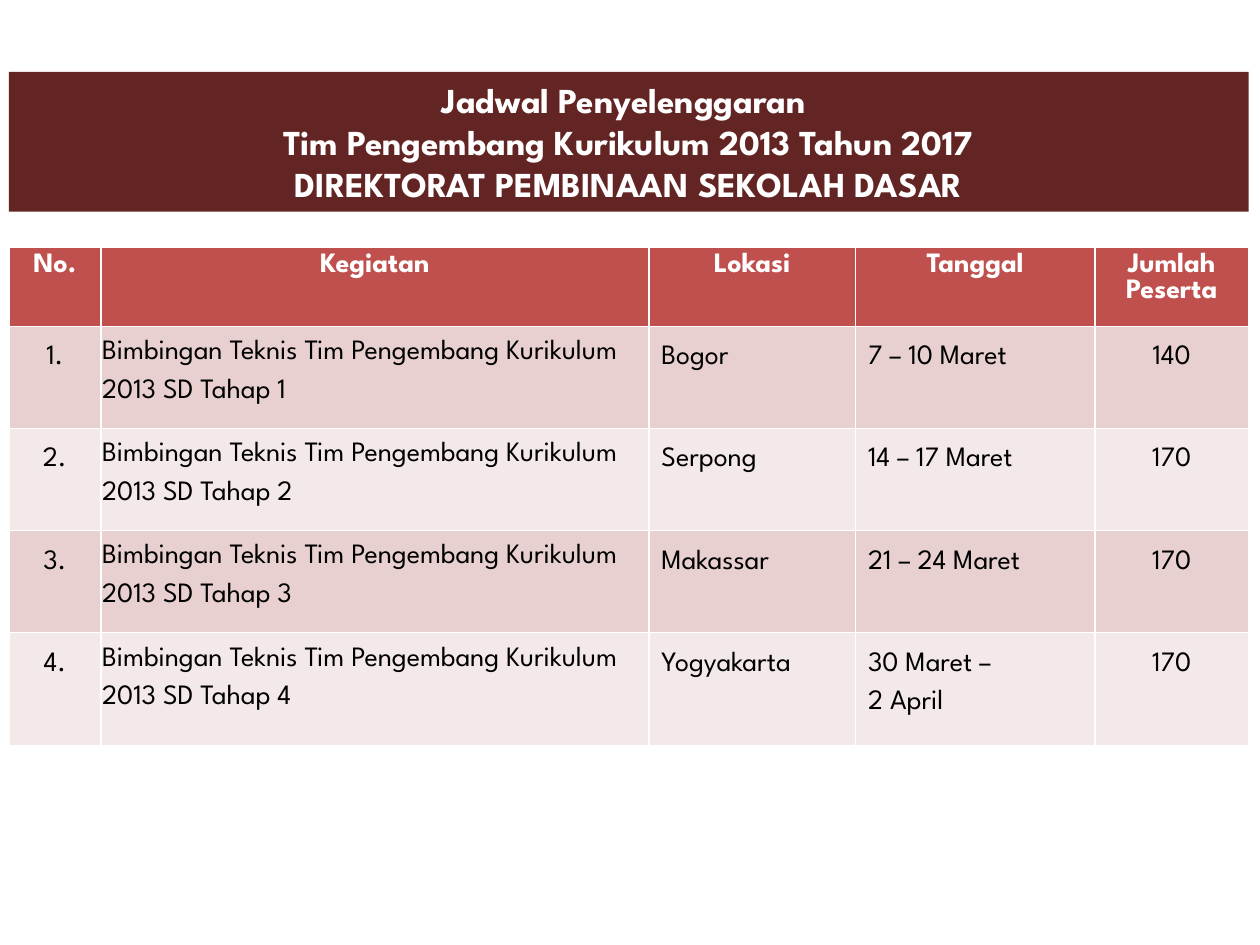
"""Build the 2017 curriculum training schedule slide."""
from dataclasses import dataclass

from pptx import Presentation
from pptx.dml.color import RGBColor
from pptx.enum.shapes import MSO_SHAPE as Shape
from pptx.enum.text import MSO_ANCHOR as Anchor, PP_ALIGN as Align
from pptx.util import Inches, Pt


def colour(value):
    return RGBColor.from_string(value)


@dataclass
class SchedulePage:
    page: object
    font: str = "League Spartan"
    banner_fill: str = "632523"
    header_fill: str = "C0504D"
    bands: tuple = ("E8D0D0", "F4E9E9")
    light: str = "FFFFFF"
    dark: str = "000000"

    def set_text(self, frame, text, size, ink, bold, align, spacing=None):
        frame.text = text
        for para in frame.paragraphs:
            para.alignment = align
            para.line_spacing = spacing
            para.font.name = self.font
            para.font.size = Pt(size)
            para.font.bold = bold
            para.font.color.rgb = colour(ink)

    def banner(self, text, left, top, width, height):
        box = self.page.shapes.add_shape(
            Shape.RECTANGLE, Inches(left), Inches(top), Inches(width), Inches(height))
        box.shadow.inherit = False
        box.fill.solid()
        box.fill.fore_color.rgb = colour(self.banner_fill)
        box.line.fill.background()
        box.text_frame.word_wrap = True
        box.text_frame.vertical_anchor = Anchor.TOP
        self.set_text(box.text_frame, text, 20, self.light, True, Align.CENTER)

    def table(self, rows, left, top, widths, heights, centred, flush):
        grid = self.page.shapes.add_table(
            len(rows), len(widths), Inches(left), Inches(top),
            Inches(sum(widths)), Inches(sum(heights))).table
        for column, width in zip(grid.columns, widths):
            column.width = Inches(width)
        for row, height in zip(grid.rows, heights):
            row.height = Inches(height)
        for r, texts in enumerate(rows):
            for c, text in enumerate(texts):
                cell = grid.cell(r, c)
                cell.fill.solid()
                if r == 0:
                    cell.fill.fore_color.rgb = colour(self.header_fill)
                    self.set_text(cell.text_frame, text, 16, self.light, True, Align.CENTER)
                    continue
                cell.fill.fore_color.rgb = colour(self.bands[(r - 1) % 2])
                align = Align.CENTER if c in centred else Align.LEFT
                self.set_text(cell.text_frame, text, 16, self.dark, False, align, 1.5)
                if c == flush:
                    cell.margin_left = cell.margin_right = cell.margin_top = Inches(0.01)
                    cell.margin_bottom = 0


def main():
    deck = Presentation()
    deck.slide_width, deck.slide_height = Inches(10), Inches(7.5)
    schedule = SchedulePage(deck.slides.add_slide(deck.slide_layouts[6]))

    sessions = [
        ("Bogor", "7 – 10 Maret", "140"),
        ("Serpong", "14 – 17 Maret", "170"),
        ("Makassar", "21 – 24 Maret", "170"),
        ("Yogyakarta", "30 Maret –\n2 April", "170"),
    ]
    activity = "Bimbingan Teknis Tim Pengembang Kurikulum 2013 SD Tahap"
    rows = [("No.", "Kegiatan", "Lokasi", "Tanggal", "Jumlah Peserta")]
    rows += [(f"{number}.", f"{activity} {number}", *session)
             for number, session in enumerate(sessions, 1)]
    schedule.table(rows, 0.07, 1.96, widths=(0.73, 4.35, 1.64, 1.9, 1.22),
                   heights=(0.63, 0.81, 0.81, 0.81, 0.9), centred=(0, 4), flush=1)
    schedule.banner("Jadwal Penyelenggaran \n"
                    "Tim Pengembang Kurikulum 2013 Tahun 2017\n"
                    "DIREKTORAT PEMBINAAN SEKOLAH DASAR", 0.07, 0.57, 9.84, 1.11)
    deck.save("out.pptx")


if __name__ == "__main__":
    main()
